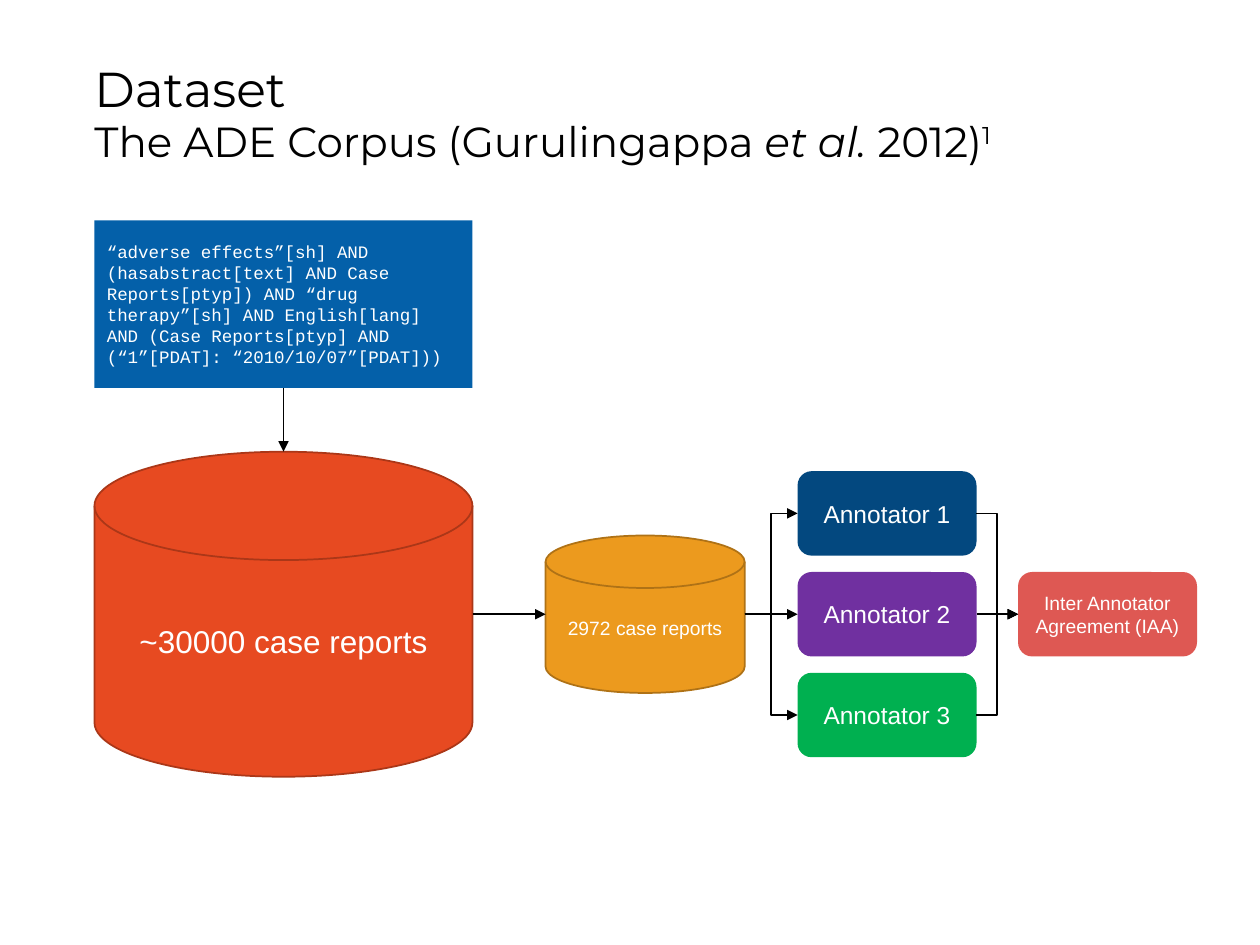
from lxml import etree
from pptx import Presentation
from pptx.dml.color import RGBColor
from pptx.enum.shapes import MSO_CONNECTOR as Link, MSO_SHAPE as Shape
from pptx.enum.text import MSO_ANCHOR as Anchor, PP_ALIGN as Align
from pptx.oxml.ns import qn
from pptx.util import Inches, Pt

COLORS = {
    "black": "000000", "white": "FFFFFF", "query": "0460A9",
    "reports": "E74A21", "reports_edge": "AB3718",
    "sample": "EC9A1E", "sample_edge": "AF7216",
    "first": "03487F", "second": "7030A0", "third": "00B050",
    "agreement": "DE5853",
}

TITLE = [
    ("Dataset\v", {"size": 28}),
    ("The ADE Corpus (Gurulingappa ", {}),
    ("et al. ", {"italic": True}),
    ("2012)", {}),
    ("1", {"superscript": True}),
]
QUERY = ("“adverse effects”[sh] AND (hasabstract[text] AND Case Reports[ptyp]) "
         "AND “drug therapy”[sh] AND English[lang] AND (Case Reports[ptyp] AND "
         "(“1”[PDAT]: “2010/10/07”[PDAT]))")
ANNOTATORS = [("Annotator 1", "first"), ("Annotator 2", "second"), ("Annotator 3", "third")]

LEFT = 0.75
FLOW_Y = 4.875
STEP_W, STEP_H, STEP_PITCH = 1.42, 0.67, 0.8


def rgb(name):
    return RGBColor.from_string(COLORS[name])


def write(paragraph, text, font="Arial", size=14, color="white", italic=False, superscript=False):
    for index, part in enumerate(text.split("\v")):
        if index:
            paragraph.add_line_break()
        if not part:
            continue
        run = paragraph.add_run()
        run.text = part
        run.font.name, run.font.size = font, Pt(size)
        run.font.italic = italic
        run.font.color.rgb = rgb(color)
        if superscript:
            run._r.get_or_add_rPr().set("baseline", "30000")


def add_node(kind, left, top, width, height, text, fill, edge=None, align=Align.CENTER, **style):
    node = slide.shapes.add_shape(kind, Inches(left), Inches(top), Inches(width), Inches(height))
    node.shadow.inherit = False
    node.fill.solid()
    node.fill.fore_color.rgb = rgb(fill)
    if edge:
        node.line.color.rgb = rgb(edge)
        node.line.width = Pt(1)
    else:
        node.line.fill.background()
    frame = node.text_frame
    frame.word_wrap = True
    frame.vertical_anchor = Anchor.MIDDLE
    frame.paragraphs[0].alignment = align
    write(frame.paragraphs[0], text, **style)
    return node


def side(node, across, down):
    return node.left + int(node.width * across), node.top + int(node.height * down)


def add_arrow(start, end):
    straight = start[0] == end[0] or abs(start[1] - end[1]) < Inches(0.02)
    if straight and start[0] != end[0]:
        end = (end[0], start[1])
    arrow = slide.shapes.add_connector(Link.STRAIGHT if straight else Link.ELBOW, *start, *end)
    arrow.line.color.rgb = rgb("black")
    arrow.line.width = Pt(1)
    etree.SubElement(arrow.line._get_or_add_ln(), qn("a:tailEnd"), type="triangle")
    etree.SubElement(arrow._element.spPr, qn("a:effectLst"))


def flow(source, target):
    add_arrow(side(source, 1, 0.5), side(target, 0, 0.5))


deck = Presentation()
deck.slide_width, deck.slide_height = Inches(10), Inches(7.5)
slide = deck.slides.add_slide(deck.slide_layouts[6])

title = slide.shapes.add_textbox(Inches(LEFT), Inches(0.5), Inches(8.5), Inches(1.05)).text_frame
title.word_wrap = True
title.margin_left = title.margin_top = title.margin_right = title.margin_bottom = 0
title.paragraphs[0].line_spacing = 0.95
for text, style in TITLE:
    write(title.paragraphs[0], text, **{"font": "Montserrat", "size": 24, "color": "black", **style})

query = add_node(Shape.RECTANGLE, LEFT, 1.75, 3, 1.33, QUERY, "query",
                 align=Align.LEFT, font="Courier New", size=10)
reports = add_node(Shape.FLOWCHART_MAGNETIC_DISK, LEFT, FLOW_Y - 1.29, 3, 2.58,
                   "~30000 case reports", "reports", "reports_edge", size=18)
sample = add_node(Shape.FLOWCHART_MAGNETIC_DISK, 4.33, FLOW_Y - 0.625, 1.58, 1.25,
                  "2972 case reports", "sample", "sample_edge", size=11)
agreement = add_node(Shape.ROUNDED_RECTANGLE, 8.08, FLOW_Y - STEP_H / 2, STEP_W, STEP_H,
                     "Inter Annotator Agreement (IAA)", "agreement", size=11)

add_arrow(side(query, 0.5, 1), side(reports, 0.5, 0))
flow(reports, sample)
for row, (label, fill) in enumerate(ANNOTATORS):
    top = FLOW_Y + (row - 1) * STEP_PITCH - STEP_H / 2
    annotator = add_node(Shape.ROUNDED_RECTANGLE, 6.33, top, STEP_W, STEP_H, label, fill)
    flow(sample, annotator)
    flow(annotator, agreement)

deck.save("out.pptx")
